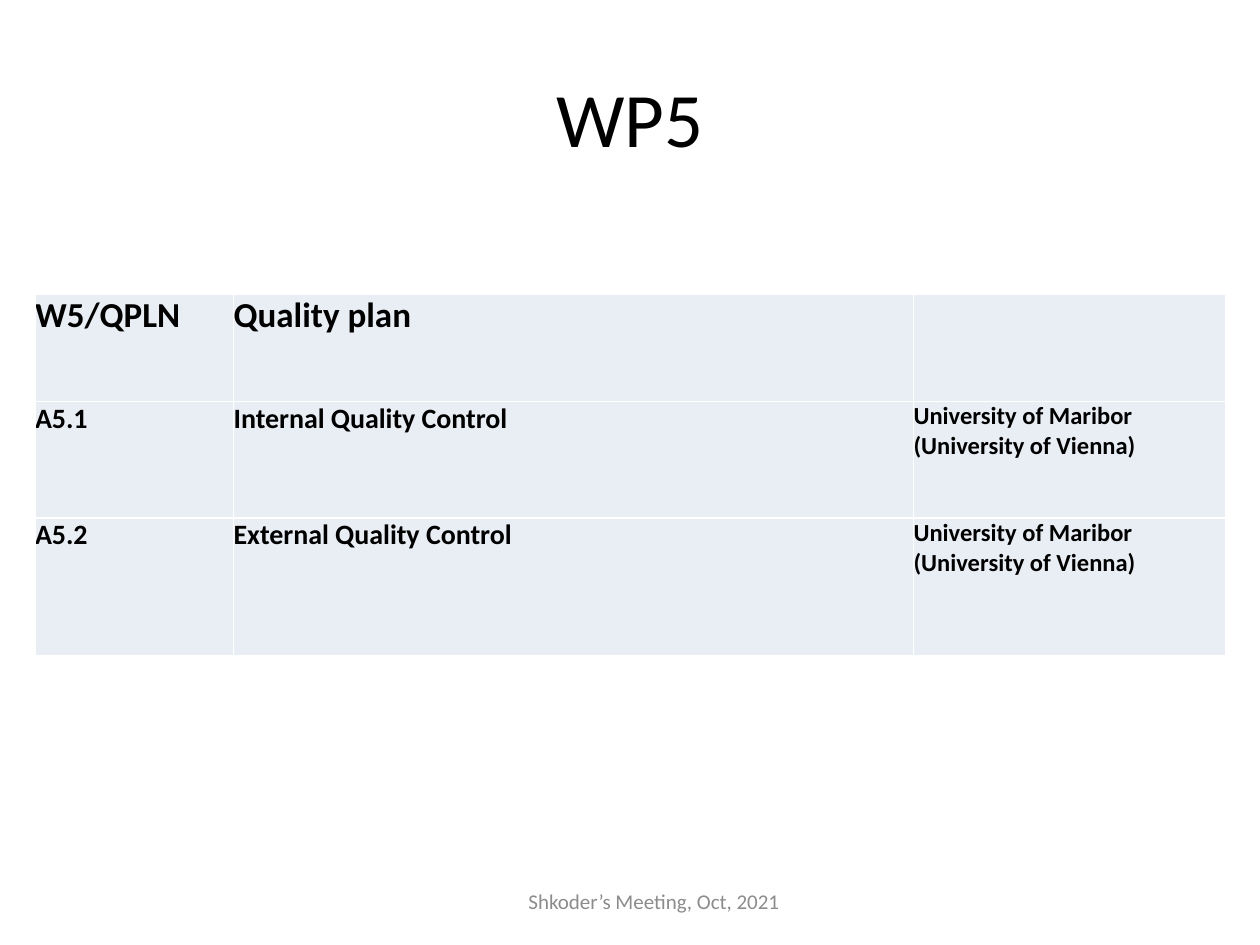
from dataclasses import dataclass

from lxml.etree import SubElement as Sub
from pptx import Presentation
from pptx.dml.color import RGBColor as RGB
from pptx.enum.text import MSO_ANCHOR as Anchor, PP_ALIGN as Align
from pptx.oxml.ns import qn
from pptx.util import Pt


@dataclass(frozen=True)
class Theme:
    font: str = "Calibri"
    ink: str = "000000"
    muted: str = "8C8C8C"
    band: str = "E9EDF4"
    rule: str = "FFFFFF"
    title_size: int = 44
    heading_size: int = 20
    activity_size: int = 16
    partner_size: int = 14
    footer_size: int = 12


def apply(target, values):
    for name, value in values.items():
        setattr(target, name, value)


class Deck:
    def __init__(self, theme):
        self.theme = theme
        self.show = Presentation()
        apply(self.show, {"slide_width": Pt(720), "slide_height": Pt(540)})
        self.slide = None

    def text(self, frame, words, size, color, bold=False, align=Align.LEFT):
        frame.word_wrap = True
        line = frame.paragraphs[0]
        line.alignment = align
        run = line.add_run()
        run.text = words
        apply(run.font, {"name": self.theme.font, "size": Pt(size), "bold": bold})
        run.font.color.rgb = RGB.from_string(color)

    def title(self, words, left, top, width, height):
        self.slide = self.show.slides.add_slide(self.show.slide_layouts[5])
        heading = self.slide.shapes.title
        apply(heading, {"left": Pt(left), "top": Pt(top),
                        "width": Pt(width), "height": Pt(height)})
        heading.text_frame.vertical_anchor = Anchor.MIDDLE
        self.text(heading.text_frame, words, self.theme.title_size,
                  self.theme.ink, align=Align.CENTER)

    def footer(self, words, left, top, width, height):
        box = self.slide.shapes.add_textbox(Pt(left), Pt(top), Pt(width), Pt(height))
        box.text_frame.vertical_anchor = Anchor.MIDDLE
        self.text(box.text_frame, words, self.theme.footer_size,
                  self.theme.muted, align=Align.CENTER)

    def borders(self, cell):
        properties = cell._tc.get_or_add_tcPr()
        for side in ("a:lnL", "a:lnR", "a:lnT", "a:lnB"):
            edge = Sub(properties, qn(side), w=str(Pt(1)))
            Sub(Sub(edge, qn("a:solidFill")), qn("a:srgbClr"), val=self.theme.rule)

    def cell(self, cell, words, size):
        self.borders(cell)
        cell.fill.solid()
        cell.fill.fore_color.rgb = RGB.from_string(self.theme.band)
        if words:
            apply(cell, {f"margin_{side}": 0 for side in ("left", "top", "right", "bottom")})
            self.text(cell.text_frame, words, size, self.theme.ink, bold=True)

    def table(self, rows, sizes, left, top, widths, heights):
        grid = self.slide.shapes.add_table(
            len(rows), len(widths), Pt(left), Pt(top), Pt(sum(widths)), Pt(sum(heights))).table
        apply(grid, {"first_row": False, "horz_banding": False})
        for column, width in zip(grid.columns, widths):
            column.width = Pt(width)
        for row, height, entries, row_sizes in zip(grid.rows, heights, rows, sizes):
            row.height = Pt(height)
            for cell, words, size in zip(row.cells, entries, row_sizes):
                self.cell(cell, words, size)


def main():
    theme = Theme()
    deck = Deck(theme)
    deck.title("WP5", 36, 21.6, 648, 90)

    partners = "University of Maribor (University of Vienna)"
    work_package = [
        ("W5/QPLN", "Quality plan", ""),
        ("A5.1", "Internal Quality Control", partners),
        ("A5.2", "External Quality Control", partners),
    ]
    heading_sizes = [theme.heading_size] * 3
    activity_sizes = [theme.activity_size] * 2 + [theme.partner_size]
    deck.table(work_package, [heading_sizes, activity_sizes, activity_sizes],
               20, 168, (113.5, 388.5, 178.5), (61.5, 66.5, 78.5))

    deck.footer("Shkoder’s Meeting, Oct, 2021", 246, 500.5, 255.5, 28.8)
    deck.show.save("out.pptx")


if __name__ == "__main__":
    main()
